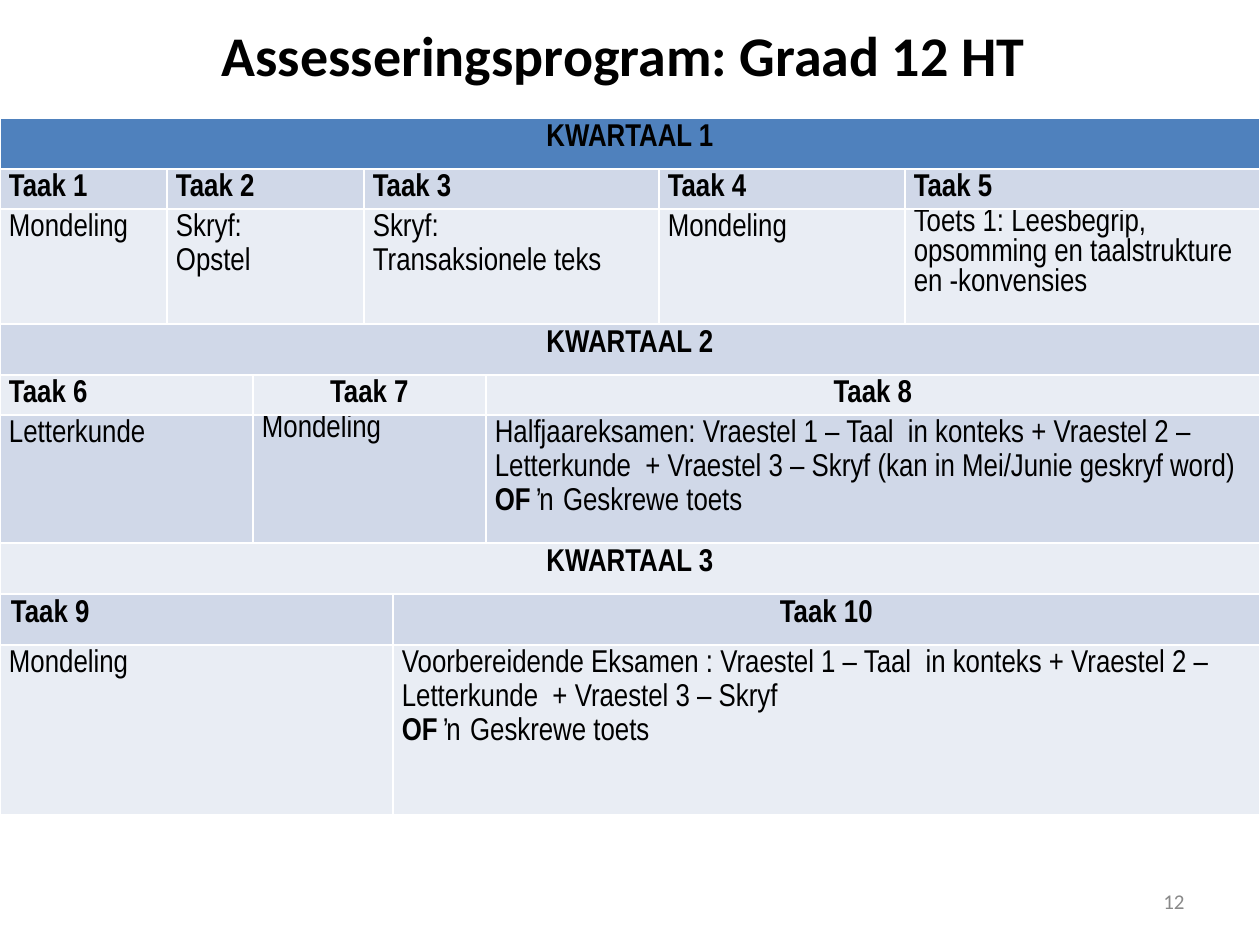
from dataclasses import dataclass

from pptx import Presentation
from pptx.dml.color import RGBColor as Color
from pptx.enum.text import MSO_ANCHOR as Anchor, PP_ALIGN as Align
from pptx.util import Emu, Pt


@dataclass(frozen=True)
class Theme:
    """Colours, fonts and type sizes of the slide."""
    heading_font: str = "Calibri"
    table_font: str = "Arial Narrow"
    title_size: int = 32
    table_size: int = 18
    number_size: int = 12
    text: str = "000000"
    muted: str = "898989"
    header: str = "4F81BD"
    bands: tuple = ("E9EDF4", "D0D8E8")


@dataclass(frozen=True)
class Entry:
    """One table cell: columns covered, paragraphs and format."""
    span: int
    paragraphs: tuple
    bold: bool = False
    centred: bool = False
    roomy: bool = False
    spacing: float | None = 1.15


THEME = Theme()
EMU_PER_PX = 914400 / 126
COLUMNS = (167, 86, 111, 29, 93, 173, 246, 355)


def px(length):
    """Turn a length in px into EMU."""
    return Emu(round(length * EMU_PER_PX))


def term(name):
    """Describe a full-width row that names a school term."""
    return [Entry(len(COLUMNS), (name,), True, True, True, None)]


def task(span, name, centred=False, roomy=False):
    """Describe the heading of one task."""
    return Entry(span, (name,), True, centred, roomy, None if roomy else 1.15)


ROWS = (
    (51, term("KWARTAAL 1")),
    (40, [task(1, "Taak 1"), task(2, "Taak 2"), task(3, "Taak 3"),
          task(1, "Taak 4"), task(1, "Taak 5")]),
    (115, [Entry(1, ("Mondeling",)),
           Entry(2, ("Skryf:", "Opstel")),
           Entry(3, ("Skryf:", "Transaksionele teks")),
           Entry(1, ("Mondeling",)),
           Entry(1, ("Toets 1: Leesbegrip, opsomming en taalstrukture en -konvensies",),
                 spacing=None)]),
    (51, term("KWARTAAL 2")),
    (40, [task(2, "Taak 6"), task(3, "Taak 7", True), task(3, "Taak 8", True)]),
    (128, [Entry(2, ("Letterkunde",)),
           Entry(3, ("Mondeling",), spacing=None),
           Entry(3, ("Halfjaareksamen: Vraestel 1 – Taal  in konteks + Vraestel 2 – "
                     "Letterkunde  + Vraestel 3 – Skryf (kan in Mei/Junie geskryf word)",
                     "**OF** ŉ Geskrewe toets"))]),
    (51, term("KWARTAAL 3")),
    (51, [task(4, "Taak 9", roomy=True), task(4, "Taak 10", True, True)]),
    (170, [Entry(4, ("Mondeling",)),
           Entry(4, ("Voorbereidende Eksamen : Vraestel 1 – Taal  in konteks + Vraestel 2 – "
                     "Letterkunde  + Vraestel 3 – Skryf",
                     "**OF** ŉ Geskrewe toets"))]),
)


def set_font(font, name, size, colour, bold=False):
    """Format a font."""
    font.name, font.size, font.bold = name, Pt(size), bold
    font.color.rgb = Color.from_string(colour)


def place(shape, left, top, width, height):
    """Move a shape into a box."""
    shape.left, shape.top = px(left), px(top)
    shape.width, shape.height = px(width), px(height)


def add_title(slide, text, box):
    """Place and format the slide title."""
    title = slide.shapes.title
    place(title, *box)
    title.text_frame.text = text
    title.text_frame.vertical_anchor = Anchor.MIDDLE
    paragraph = title.text_frame.paragraphs[0]
    paragraph.alignment = Align.CENTER
    set_font(paragraph.font, THEME.heading_font, THEME.title_size, THEME.text, True)


def fill_cell(cell, entry, colour):
    """Write one entry into a cell and format it."""
    cell.fill.solid()
    cell.fill.fore_color.rgb = Color.from_string(colour)
    cell.vertical_anchor = Anchor.TOP
    cell.margin_left = cell.margin_right = px(11 if entry.roomy else 9)
    cell.margin_top = cell.margin_bottom = px(6 if entry.roomy else 0)
    frame = cell.text_frame
    for index, text in enumerate(entry.paragraphs):
        paragraph = frame.add_paragraph() if index else frame.paragraphs[0]
        paragraph.alignment = Align.CENTER if entry.centred else Align.LEFT
        if entry.spacing:
            paragraph.line_spacing = entry.spacing
        for position, part in enumerate(text.split("**")):
            if part:
                run = paragraph.add_run()
                run.text = part
                set_font(run.font, THEME.table_font, THEME.table_size, THEME.text,
                         entry.bold or position % 2 == 1)


def add_programme(slide, left, top):
    """Build the assessment table from its top left corner."""
    heights = [height for height, _ in ROWS]
    table = slide.shapes.add_table(len(ROWS), len(COLUMNS), px(left), px(top),
                                   px(sum(COLUMNS)), px(sum(heights))).table
    for column, width in zip(table.columns, COLUMNS):
        column.width = px(width)
    for row_index, (height, entries) in enumerate(ROWS):
        table.rows[row_index].height = px(height)
        colour = THEME.bands[row_index % 2] if row_index else THEME.header
        start = 0
        for entry in entries:
            cell = table.cell(row_index, start)
            if entry.span > 1:
                cell.merge(table.cell(row_index, start + entry.span - 1))
            fill_cell(cell, entry, colour)
            start += entry.span


def add_page_number(slide, text, box):
    """Place the page number."""
    frame = slide.shapes.add_textbox(*map(px, box)).text_frame
    frame.word_wrap = True
    frame.vertical_anchor = Anchor.MIDDLE
    paragraph = frame.paragraphs[0]
    paragraph.text = text
    paragraph.alignment = Align.RIGHT
    set_font(paragraph.font, THEME.heading_font, THEME.number_size, THEME.muted)


def main():
    """Build and save the presentation."""
    presentation = Presentation()
    presentation.slide_width, presentation.slide_height = px(1260), px(945)
    slide = presentation.slides.add_slide(presentation.slide_layouts[5])
    add_title(slide, "Assesseringsprogram: Graad 12 HT ", (0, 3, 1260, 103))
    add_programme(slide, 0, 118)
    add_page_number(slide, "12", (903, 876, 294, 50))
    presentation.save("out.pptx")


if __name__ == "__main__":
    main()
